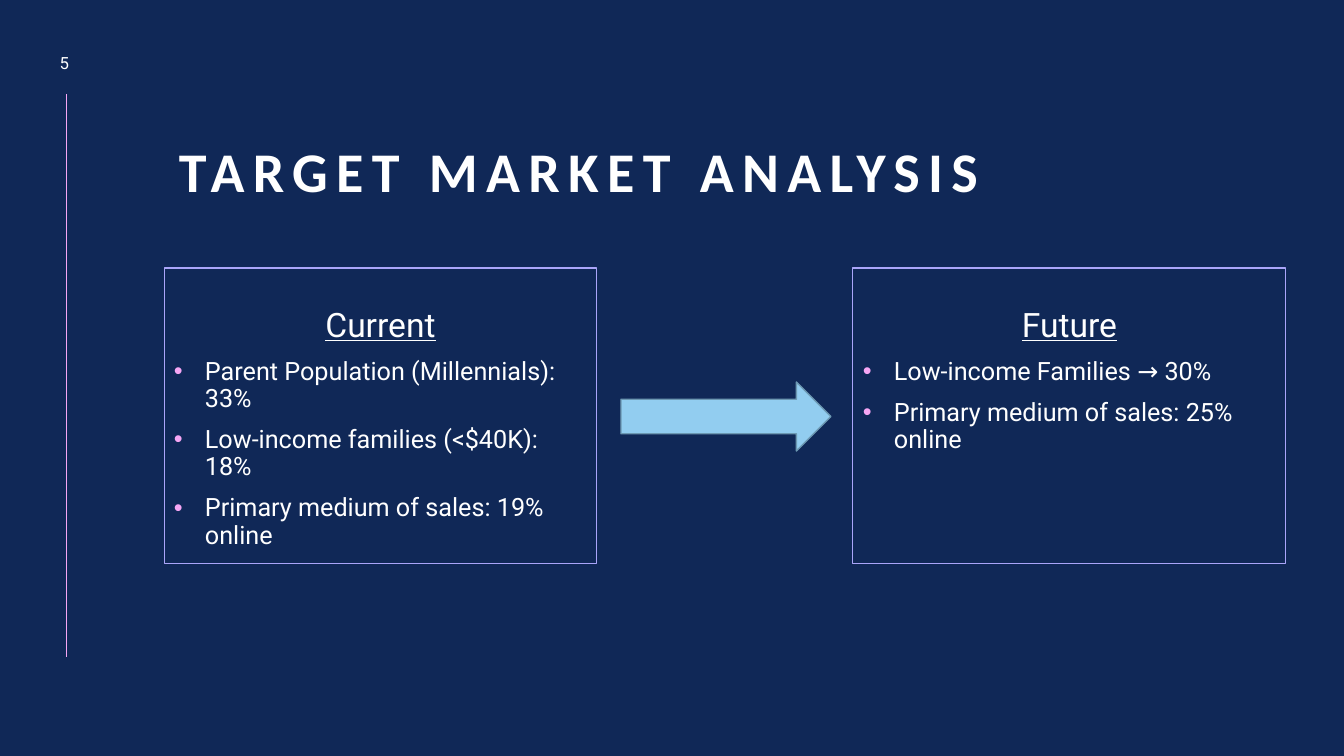
from dataclasses import dataclass

from lxml import etree
from pptx import Presentation
from pptx import util as u
from pptx.dml.color import RGBColor
from pptx.enum import shapes, text
from pptx.oxml import ns

EMU_PER_PX = 914400 / 100.8

NAVY = RGBColor(0x10, 0x28, 0x57)
WHITE = RGBColor(0xFF, 0xFF, 0xFF)
PINK = RGBColor(0xF6, 0xA6, 0xF4)
LILAC = RGBColor(0xAA, 0xA5, 0xF9)
SKY = RGBColor(0x92, 0xCD, 0xF0)
STEEL = RGBColor(0x6C, 0x98, 0xB2)

PANEL_TOP, PANEL_WIDTH, PANEL_HEIGHT = 268, 433, 296
HEADING_INSET = 40
BULLET_INDENT = 31


@dataclass(frozen=True)
class Panel:
    left: int
    heading: str
    points: tuple[str, ...]


PANELS = (
    Panel(164, "Current", (
        "Parent Population (Millennials): 33%",
        "Low-income families (<$40K): 18%",
        "Primary medium of sales: 19% online",
    )),
    Panel(853, "Future", (
        "Low-income Families → 30%",
        "Primary medium of sales: 25% online",
    )),
)


def px(length: int) -> u.Emu:
    return u.Emu(round(length * EMU_PER_PX))


def add_span(para, words: str, size: int, font: str = "Roboto"):
    span = para.add_run()
    span.text = words
    span.font.size = u.Pt(size)
    span.font.name = font
    span.font.color.rgb = WHITE
    return span


def add_bullet(para) -> None:
    properties = para._p.get_or_add_pPr()
    properties.set("marL", str(px(BULLET_INDENT)))
    properties.set("indent", str(-px(BULLET_INDENT)))
    colour = etree.SubElement(properties, ns.qn("a:buClr"))
    etree.SubElement(colour, ns.qn("a:srgbClr"), val=str(PINK))
    etree.SubElement(properties, ns.qn("a:buFont"), typeface="Arial")
    etree.SubElement(properties, ns.qn("a:buChar"), char="•")


def add_label(page, left: int, top: int, width: int, height: int,
              anchor: text.MSO_ANCHOR):
    box = page.shapes.add_textbox(px(left), px(top), px(width), px(height))
    box.text_frame.word_wrap = True
    box.text_frame.vertical_anchor = anchor
    return box.text_frame.paragraphs[0]


def add_panel(page, panel: Panel) -> None:
    box = page.shapes.add_shape(
        shapes.MSO_SHAPE.RECTANGLE,
        px(panel.left), px(PANEL_TOP), px(PANEL_WIDTH), px(PANEL_HEIGHT))
    box.shadow.inherit = False
    box.fill.background()
    box.line.color.rgb = LILAC
    box.line.width = u.Pt(0.75)

    frame = box.text_frame
    frame.word_wrap = True
    frame.vertical_anchor = text.MSO_ANCHOR.TOP
    frame.margin_top = px(HEADING_INSET)
    heading = frame.paragraphs[0]
    heading.alignment = text.PP_ALIGN.CENTER
    heading.line_spacing = 0.9
    add_span(heading, panel.heading, 24).font.underline = True

    for point in panel.points:
        para = frame.add_paragraph()
        para.alignment = text.PP_ALIGN.LEFT
        para.line_spacing = 0.9
        para.space_before = u.Pt(10)
        add_bullet(para)
        add_span(para, point, 18)


def add_rule(page) -> None:
    rule = page.shapes.add_connector(
        shapes.MSO_CONNECTOR.STRAIGHT, px(66), px(94), px(66), px(657))
    rule.line.color.rgb = PINK
    rule.line.width = u.Pt(0.5)
    etree.SubElement(rule._element.spPr, ns.qn("a:effectLst"))


def add_arrow(page) -> None:
    arrow = page.shapes.add_shape(
        shapes.MSO_SHAPE.RIGHT_ARROW, px(621), px(382), px(210), px(69))
    arrow.shadow.inherit = False
    arrow.fill.solid()
    arrow.fill.fore_color.rgb = SKY
    arrow.line.color.rgb = STEEL
    arrow.line.width = u.Pt(1)


def add_page_number(page) -> None:
    para = add_label(page, 36, 46, 57, 34, text.MSO_ANCHOR.MIDDLE)
    para.alignment = text.PP_ALIGN.CENTER
    para.space_after = u.Pt(6)
    add_span(para, "5", 12)


def add_title(page) -> None:
    para = add_label(page, 169, 92, 979, 118, text.MSO_ANCHOR.BOTTOM)
    para.line_spacing = 0.9
    span = add_span(para, "TARGET MARKET ANALYSIS", 40, "Calibri")
    span.font.bold = True
    span._r.get_or_add_rPr().set("spc", "600")


def main() -> None:
    deck = Presentation()
    deck.slide_width, deck.slide_height = px(1344), px(756)
    page = deck.slides.add_slide(deck.slide_layouts[6])
    page.background.fill.solid()
    page.background.fill.fore_color.rgb = NAVY

    add_rule(page)
    add_page_number(page)
    for panel in PANELS:
        add_panel(page, panel)
    add_arrow(page)
    add_title(page)
    deck.save("out.pptx")


if __name__ == "__main__":
    main()
